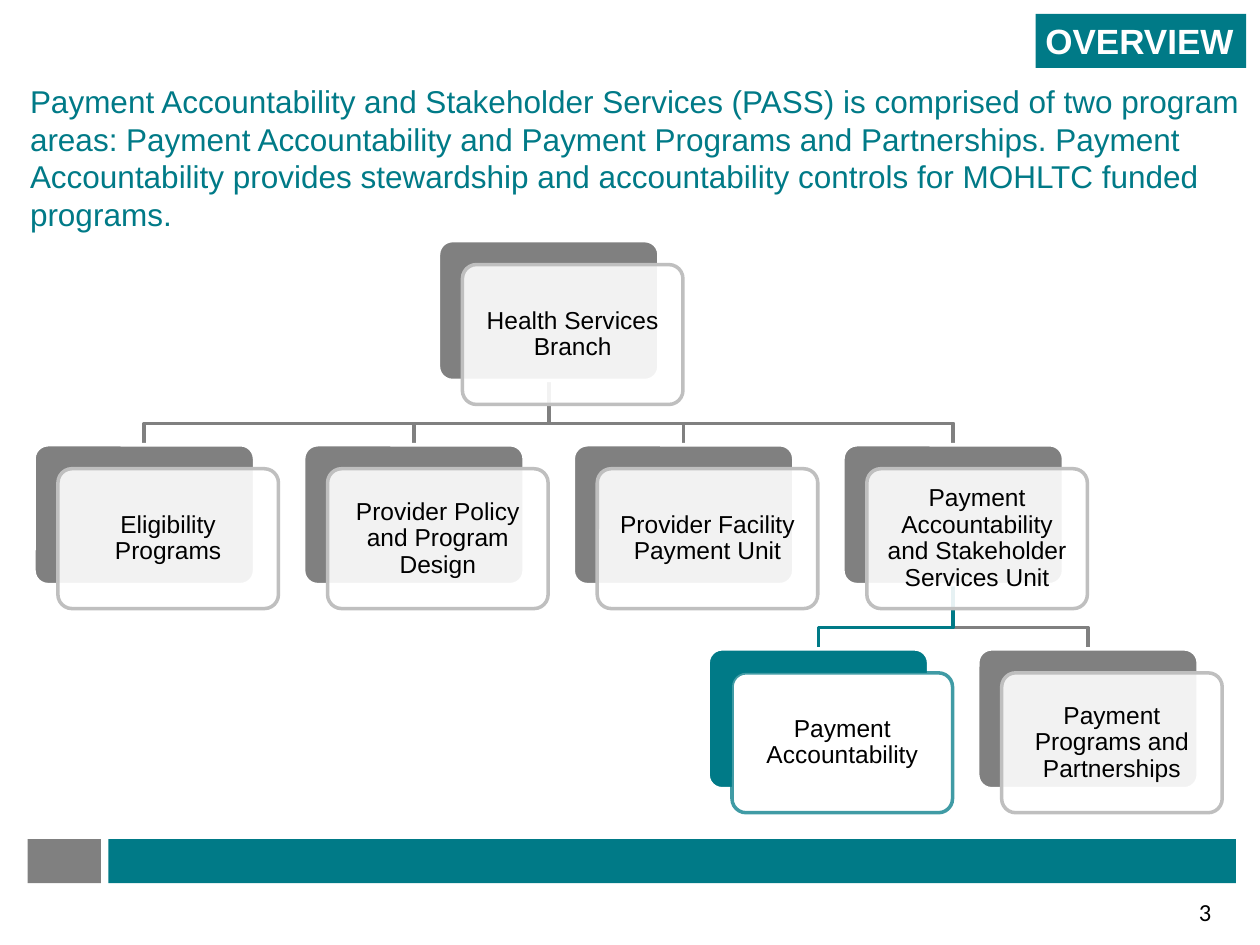
"""Build the PASS overview slide with its branch organization chart."""
from dataclasses import dataclass

from lxml import etree
from pptx import Presentation
from pptx import util as u
from pptx.dml.color import RGBColor
from pptx.enum import shapes, text
from pptx.oxml.ns import qn


@dataclass(frozen=True)
class Theme:
    teal: str = "007A87"
    gray: str = "808080"
    silver: str = "BFBFBF"
    white: str = "FFFFFF"
    black: str = "000000"
    heading_font: str = "Arial"
    number_font: str = "Calibri"
    tag_size: int = 20
    body_size: int = 18
    label_size: int = 14
    line_width: int = 2


THEME = Theme()
CARD_WIDTH, CARD_HEIGHT = 1.75, 1.11
CARD_SHIFT = 0.19
CARD_MARGIN = 0.09
LEFT, TOP = 0.27, 1.91
COLUMN_STEP, LEVEL_STEP = 2.14, 1.62
ELBOW_DROP = 0.34

UNITS = {
    "branch": (1.5, 0, "Health Services Branch"),
    "eligibility": (0, 1, "Eligibility Programs"),
    "policy": (1, 1, "Provider Policy and Program Design"),
    "facility": (2, 1, "Provider Facility Payment Unit"),
    "pass": (3, 1, "Payment Accountability and Stakeholder Services Unit"),
    "accountability": (2.5, 2, "Payment Accountability"),
    "partnerships": (3.5, 2, "Payment Programs and Partnerships"),
}
REPORTING = [
    ("pass", "partnerships"),
    ("pass", "accountability"),
    ("branch", "pass"),
    ("branch", "facility"),
    ("branch", "policy"),
    ("branch", "eligibility"),
]
HIGHLIGHT = "accountability"


def apply(target, values):
    for name, value in values.items():
        setattr(target, name, value)


def corner(unit):
    column, level, _ = UNITS[unit]
    return LEFT + column * COLUMN_STEP, TOP + level * LEVEL_STEP


class SlideBuilder:
    def __init__(self, slide, theme):
        self.slide, self.theme = slide, theme

    def put_text(self, shape, words, size, color, font=None, bold=False,
                 align=text.PP_ALIGN.LEFT, spacing=None, frame=None):
        apply(shape.text_frame, {"word_wrap": True, **(frame or {})})
        paragraph = shape.text_frame.paragraphs[0]
        apply(paragraph, {"alignment": align, "line_spacing": spacing})
        run = paragraph.add_run()
        run.text = words
        apply(run.font, {"name": font or self.theme.heading_font,
                         "size": u.Pt(size), "bold": bold})
        run.font.color.rgb = RGBColor.from_string(color)

    def text_box(self, box, words, size, color, **style):
        shape = self.slide.shapes.add_textbox(*map(u.Inches, box))
        self.put_text(shape, words, size, color, **style)

    def outline(self, shape, color):
        shape.line.color.rgb = RGBColor.from_string(color)
        shape.line.width = u.Pt(self.theme.line_width)

    def fade(self, shape, route, percent):
        color = shape.element.spPr.xpath(route)[0]
        etree.SubElement(color, qn("a:alpha"), val=str(percent * 1000))

    def block(self, box, fill, line=None, rounded=False):
        kind = shapes.MSO_SHAPE.ROUNDED_RECTANGLE if rounded else shapes.MSO_SHAPE.RECTANGLE
        shape = self.slide.shapes.add_shape(kind, *map(u.Inches, box))
        shape.shadow.inherit = False
        shape.fill.solid()
        shape.fill.fore_color.rgb = RGBColor.from_string(fill)
        if rounded:
            shape.adjustments[0] = 0.1
        if line:
            self.outline(shape, line)
        else:
            shape.line.fill.background()
        return shape

    def elbow(self, parent, child, color):
        (parent_x, parent_y), (child_x, child_y) = corner(parent), corner(child)
        start_x, end_x = parent_x + CARD_WIDTH / 2, child_x + CARD_WIDTH / 2
        start_y = parent_y + CARD_HEIGHT
        bend_y = start_y + ELBOW_DROP
        route = [(start_x, start_y), (start_x, bend_y), (end_x, bend_y), (end_x, child_y)]
        points = [tuple(map(u.Inches, point)) for point in route]
        builder = self.slide.shapes.build_freeform(*points[0])
        builder.add_line_segments(points[1:], close=False)
        shape = builder.convert_to_shape()
        shape.shadow.inherit = False
        shape.fill.background()
        self.outline(shape, color)

    def card(self, unit):
        theme, highlighted = self.theme, unit == HIGHLIGHT
        x, y = corner(unit)
        size = (CARD_WIDTH, CARD_HEIGHT)
        self.block((x, y, *size), theme.teal if highlighted else theme.gray,
                   theme.white, rounded=True)
        front = self.block((x + CARD_SHIFT, y + CARD_SHIFT, *size), theme.white,
                           theme.teal if highlighted else theme.silver, rounded=True)
        if highlighted:
            self.fade(front, "a:ln/a:solidFill/a:srgbClr", 75)
        else:
            self.fade(front, "a:solidFill/a:srgbClr", 90)
        margins = {f"margin_{side}": u.Inches(CARD_MARGIN)
                   for side in ("left", "right", "top", "bottom")}
        self.put_text(front, UNITS[unit][2], theme.label_size, theme.black,
                      align=text.PP_ALIGN.CENTER, spacing=0.9,
                      frame={"vertical_anchor": text.MSO_ANCHOR.MIDDLE, **margins})


def main():
    presentation = Presentation()
    apply(presentation, {"slide_width": u.Inches(10), "slide_height": u.Inches(7.5)})
    slide = presentation.slides.add_slide(presentation.slide_layouts[6])
    builder = SlideBuilder(slide, THEME)

    builder.text_box(
        (0.14, 0.6, 9.86, 1.28),
        "Payment Accountability and Stakeholder Services (PASS) is comprised of two "
        "program areas: Payment Accountability and Payment Programs and Partnerships. "
        "Payment Accountability provides stewardship and accountability controls for "
        "MOHLTC funded programs.", THEME.body_size, THEME.teal)
    tag = builder.block((8.22, 0.11, 1.67, 0.43), THEME.teal)
    builder.put_text(tag, "OVERVIEW", THEME.tag_size, THEME.white, bold=True,
                     align=text.PP_ALIGN.RIGHT, frame={"word_wrap": False})
    builder.text_box((9.32, 7.07, 0.49, 0.28), "3", THEME.label_size, THEME.black,
                     font=THEME.number_font, align=text.PP_ALIGN.CENTER)
    builder.block((0.86, 6.66, 8.95, 0.35), THEME.teal)
    builder.block((0.22, 6.66, 0.58, 0.35), THEME.gray)

    for parent, child in REPORTING:
        builder.elbow(parent, child, THEME.teal if child == HIGHLIGHT else THEME.gray)
    for unit in UNITS:
        builder.card(unit)

    presentation.save("out.pptx")


if __name__ == "__main__":
    main()
